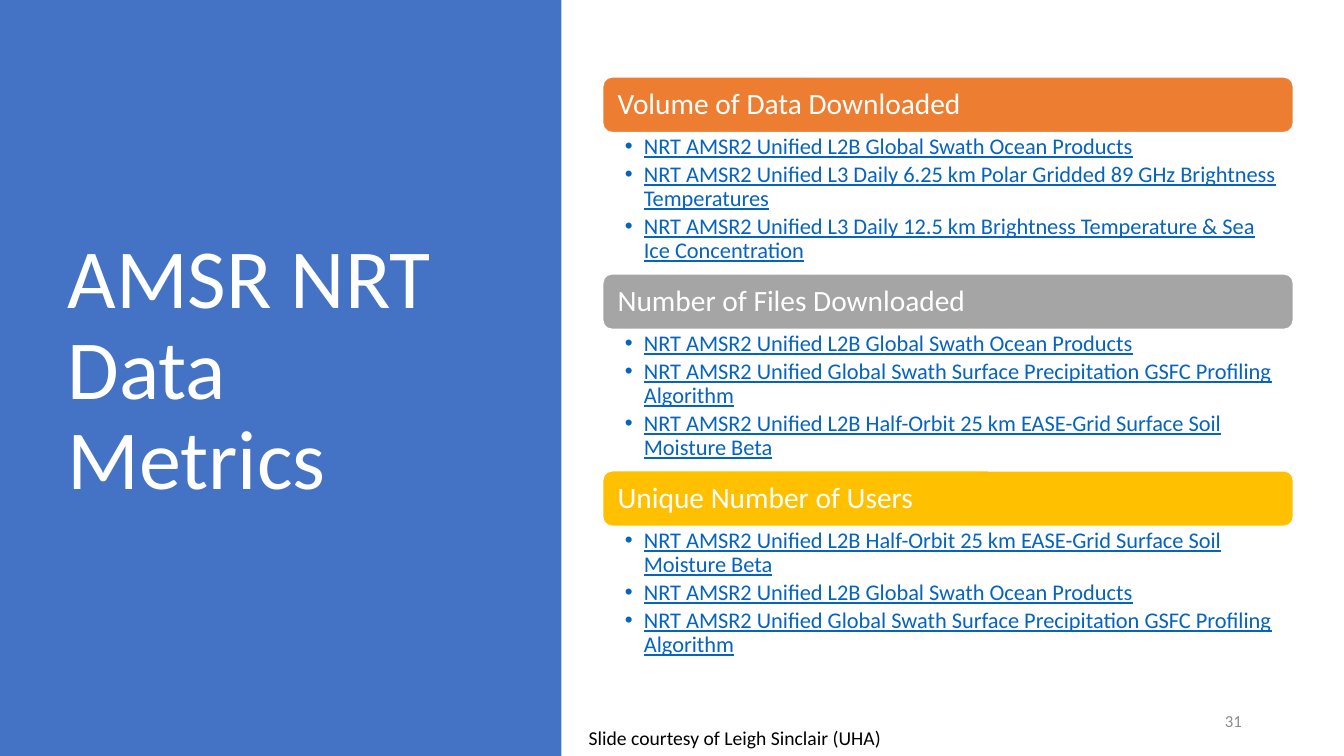
"""Build the AMSR NRT data metrics slide."""
import dataclasses

import pptx
import pptx.dml.color
import pptx.enum.shapes
import pptx.enum.text
import pptx.oxml.ns
import pptx.util
from lxml import etree

ANCHOR = pptx.enum.text.MSO_ANCHOR
ALIGN = pptx.enum.text.PP_ALIGN
SHAPE = pptx.enum.shapes.MSO_SHAPE


@dataclasses.dataclass(frozen=True)
class Theme:
    """Fonts, colours and type sizes."""
    font: str = "Calibri"
    panel: str = "4472C4"
    light: str = "FFFFFF"
    dark: str = "000000"
    muted: str = "8C8C8C"
    link: str = "0563C1"
    accents: tuple = ("ED7D31", "A5A5A5", "FFC000")
    title_size: int = 60
    heading_size: int = 21
    product_size: int = 16
    credit_size: int = 14
    number_size: int = 12


class SlideBuilder:
    """Draw styled elements on a grid of 160 columns and 90 rows."""

    def __init__(self, deck, theme):
        self.theme = theme
        self.slide = deck.slides.add_slide(deck.slide_layouts[6])
        self.column = deck.slide_width / 160
        self.row = deck.slide_height / 90

    def columns(self, count):
        """Return the length of a number of columns."""
        return pptx.util.Emu(round(count * self.column))

    def rows(self, count):
        """Return the length of a number of rows."""
        return pptx.util.Emu(round(count * self.row))

    def place(self, left, top, width, height):
        """Return a grid area as slide lengths."""
        return self.columns(left), self.rows(top), self.columns(width), self.rows(height)

    def block(self, area, preset, fill, outline=None):
        """Add a filled preset shape."""
        block = self.slide.shapes.add_shape(preset, *self.place(*area))
        block.shadow.inherit = False
        block.fill.solid()
        block.fill.fore_color.rgb = pptx.dml.color.RGBColor.from_string(fill)
        if outline:
            block.line.color.rgb = pptx.dml.color.RGBColor.from_string(outline)
            block.line.width = pptx.util.Pt(1)
        else:
            block.line.fill.background()
        return block

    def fill_text(self, holder, lines, size, color, anchor=ANCHOR.TOP, align=ALIGN.LEFT,
                  insets=(1.2, 0.6, 1.2, 0.6), spacing=1.0, after=0, bullets=False):
        """Set one paragraph per line in a shape."""
        frame = holder.text_frame
        frame.word_wrap = True
        frame.vertical_anchor = anchor
        left, top, right, bottom = insets
        frame.margin_left, frame.margin_right = self.columns(left), self.columns(right)
        frame.margin_top, frame.margin_bottom = self.rows(top), self.rows(bottom)
        for index, line in enumerate(lines):
            paragraph = frame.add_paragraph() if index else frame.paragraphs[0]
            if bullets:
                self.bullet(paragraph)
            paragraph.alignment = align
            paragraph.line_spacing = spacing
            paragraph.space_after = pptx.util.Pt(after)
            run = paragraph.add_run()
            run.text = line
            run.font.name = self.theme.font
            run.font.size = pptx.util.Pt(size)
            run.font.color.rgb = pptx.dml.color.RGBColor.from_string(color)
            if bullets:
                run.font.underline = True

    def bullet(self, paragraph):
        """Give a paragraph a hanging bullet."""
        properties = paragraph._p.get_or_add_pPr()
        indent = self.columns(2.25)
        properties.set("marL", str(indent))
        properties.set("indent", str(-indent))
        font = etree.SubElement(properties, pptx.oxml.ns.qn("a:buFont"))
        font.set("typeface", "Arial")
        mark = etree.SubElement(properties, pptx.oxml.ns.qn("a:buChar"))
        mark.set("char", "•")

    def text(self, area, lines, size, color, **layout):
        """Add a text box."""
        box = self.slide.shapes.add_textbox(*self.place(*area))
        self.fill_text(box, lines, size, color, **layout)

    def metric(self, top, heading, products, accent):
        """Add a heading bar with its product list below."""
        left, width, bar_height, list_height = 71.76, 82.2, 6.6, 16.8
        bar = self.block((left, top, width, bar_height), SHAPE.ROUNDED_RECTANGLE,
                         accent, self.theme.light)
        self.fill_text(bar, [heading], self.theme.heading_size, self.theme.light,
                       anchor=ANCHOR.MIDDLE, insets=(1.44, 1.2, 1.44, 1.2), spacing=0.9)
        self.text((left, top + bar_height, width, list_height), products,
                  self.theme.product_size, self.theme.link,
                  insets=(2.64, 0.36, 1.92, 0.36), spacing=0.9, after=2.7, bullets=True)


OCEAN = "NRT AMSR2 Unified L2B Global Swath Ocean Products"
RAIN = "NRT AMSR2 Unified Global Swath Surface Precipitation GSFC Profiling Algorithm"
SOIL = "NRT AMSR2 Unified L2B Half-Orbit 25 km EASE-Grid Surface Soil Moisture Beta"
POLAR = "NRT AMSR2 Unified L3 Daily 6.25 km Polar Gridded 89 GHz Brightness Temperatures"
ICE = "NRT AMSR2 Unified L3 Daily 12.5 km Brightness Temperature & Sea Ice Concentration"
METRICS = (
    ("Volume of Data Downloaded", (OCEAN, POLAR, ICE)),
    ("Number of Files Downloaded", (OCEAN, RAIN, SOIL)),
    ("Unique Number of Users", (SOIL, OCEAN, RAIN)),
)


def main():
    """Build and save the deck."""
    deck = pptx.Presentation()
    deck.slide_width = pptx.util.Inches(13.33)
    deck.slide_height = pptx.util.Inches(7.5)
    theme = Theme()
    builder = SlideBuilder(deck, theme)
    builder.block((0, 0, 66.84, 90), SHAPE.RECTANGLE, theme.panel)
    builder.text((6.84, 8.16, 49.92, 72.24), ["AMSR NRT Data Metrics"],
                 theme.title_size, theme.light, anchor=ANCHOR.MIDDLE, spacing=0.9)
    builder.text((113.04, 83.4, 36, 4.8), ["31"], theme.number_size, theme.muted,
                 anchor=ANCHOR.MIDDLE, align=ALIGN.RIGHT, after=6)
    for index, ((heading, products), accent) in enumerate(zip(METRICS, theme.accents)):
        builder.metric(9.17 + index * 23.44, heading, products, accent)
    builder.text((68.88, 85.8, 74.4, 4.08), ["Slide courtesy of Leigh Sinclair (UHA)"],
                 theme.credit_size, theme.dark)
    deck.save("out.pptx")


if __name__ == "__main__":
    main()
